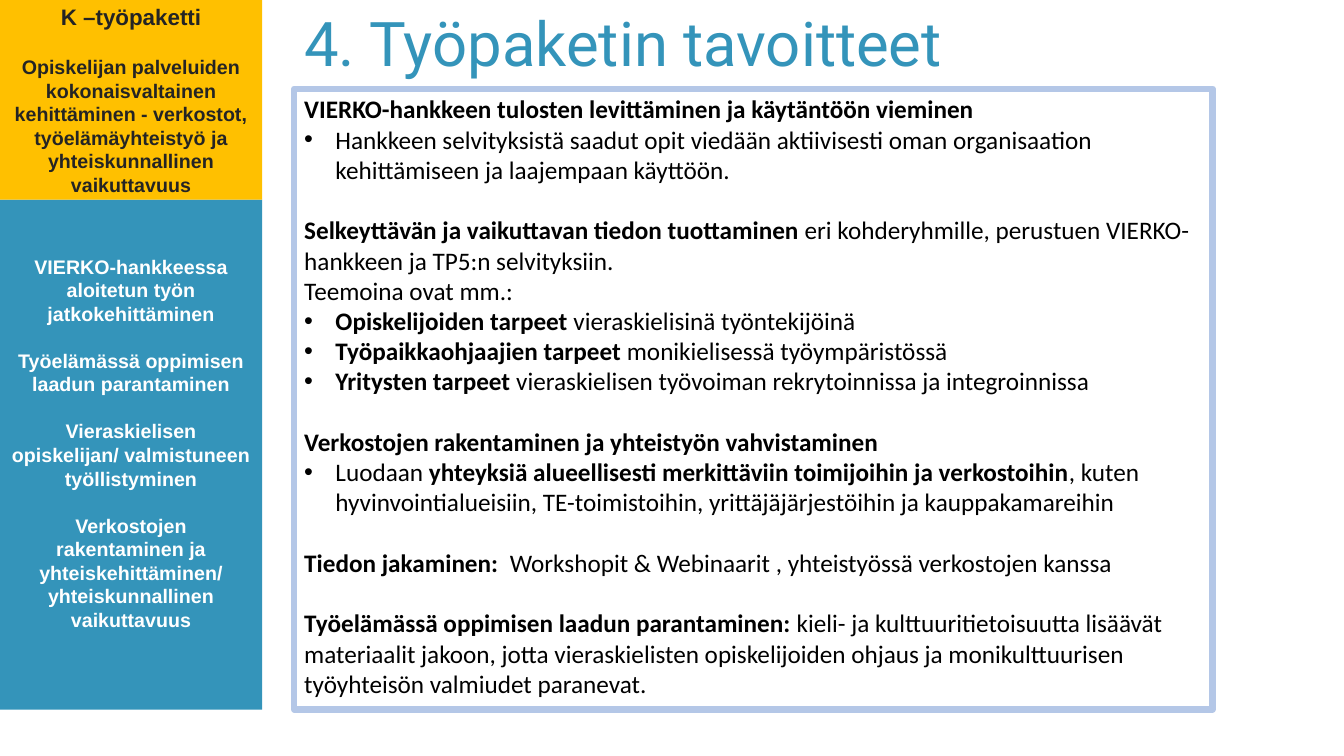
import pptx
import pptx.util
import pptx.dml.color
import pptx.enum.shapes
import pptx.enum.text
import lxml.etree
from pptx.oxml.ns import qn

COLORS = {"teal": "3494BA", "gold": "FFC000", "border": "B4C7E7",
          "white": "FFFFFF", "ink": "242424", "black": "000000"}
COLUMNS, ROWS = 133.33, 75
BULLET_INDENT = 0.31

THEMES = [
    "VIERKO-hankkeessa aloitetun työn jatkokehittäminen",
    "Työelämässä oppimisen laadun parantaminen",
    "Vieraskielisen opiskelijan/ valmistuneen työllistyminen",
    "Verkostojen rakentaminen ja yhteiskehittäminen/",
    "yhteiskunnallinen vaikuttavuus",
]
PACKAGE = [
    "K –työpaketti",
    "Opiskelijan palveluiden kokonaisvaltainen kehittäminen - verkostot, "
    "työelämäyhteistyö ja yhteiskunnallinen vaikuttavuus",
]
GOALS = [
    [("", "VIERKO-hankkeen tulosten levittäminen ja käytäntöön vieminen", ""),
     ("•", "", "Hankkeen selvityksistä saadut opit viedään aktiivisesti oman "
      "organisaation kehittämiseen ja laajempaan käyttöön.")],
    [("", "Selkeyttävän ja vaikuttavan tiedon tuottaminen ",
      "eri kohderyhmille, perustuen VIERKO-hankkeen ja TP5:n selvityksiin."),
     ("", "", "Teemoina ovat mm.:"),
     ("•", "Opiskelijoiden tarpeet ", "vieraskielisinä työntekijöinä"),
     ("•", "Työpaikkaohjaajien tarpeet ", "monikielisessä työympäristössä"),
     ("•", "Yritysten tarpeet ",
      "vieraskielisen työvoiman rekrytoinnissa ja integroinnissa")],
    [("", "Verkostojen rakentaminen ja yhteistyön vahvistaminen", ""),
     ("•", "", "Luodaan ",
      "yhteyksiä alueellisesti merkittäviin toimijoihin ja verkostoihin",
      ", kuten hyvinvointialueisiin, TE-toimistoihin, yrittäjäjärjestöihin "
      "ja kauppakamareihin")],
    [("", "Tiedon jakaminen:  ",
      "Workshopit & Webinaarit , yhteistyössä verkostojen kanssa")],
    [("", "Työelämässä oppimisen laadun parantaminen: ",
      "kieli- ja kulttuuritietoisuutta lisäävät materiaalit jakoon, jotta "
      "vieraskielisten opiskelijoiden ohjaus ja monikulttuurisen työyhteisön "
      "valmiudet paranevat.")],
]


def rgb(name):
    """Return the named colour."""
    return pptx.dml.color.RGBColor.from_string(COLORS[name])


def apply_format(target, values):
    """Set each attribute in the dict of format values."""
    for name, value in values.items():
        setattr(target, name, value)


def grid_box(deck, left, top, width, height):
    """Turn grid columns and rows into slide lengths."""
    column, row = deck.slide_width / COLUMNS, deck.slide_height / ROWS
    return [round(size) for size in
            (left * column, top * row, width * column, height * row)]


def add_panel(page, box, fill=None):
    """Add a flat rectangle, filled if a colour is named."""
    panel = page.shapes.add_shape(
        pptx.enum.shapes.MSO_SHAPE.RECTANGLE, *box)
    panel.shadow.inherit = False
    if fill:
        panel.fill.solid()
        panel.fill.fore_color.rgb = rgb(fill)
    else:
        panel.fill.background()
    panel.line.fill.background()
    panel.text_frame.word_wrap = True
    return panel


def add_para(frame, spans, size, font, color, first, gap=0, align="LEFT",
             bullet=""):
    """Add a paragraph of (text, bold) spans with an optional bullet."""
    para = frame.paragraphs[0] if first else frame.add_paragraph()
    if bullet:
        indent = pptx.util.Inches(BULLET_INDENT)
        props = para._p.get_or_add_pPr()
        props.set("marL", str(indent))
        props.set("indent", str(-indent))
        lxml.etree.SubElement(props, qn("a:buFont"), typeface="Arial")
        lxml.etree.SubElement(props, qn("a:buChar"), char=bullet)
    apply_format(para, {
        "alignment": getattr(pptx.enum.text.PP_ALIGN, align),
        "space_before": pptx.util.Pt(0 if first else gap)})
    for text, bold in spans:
        span = para.add_run()
        span.text = text
        apply_format(span.font, {
            "size": pptx.util.Pt(size), "name": font, "bold": bold})
        span.font.color.rgb = rgb(color)


def add_sidebar_panel(page, box, fill, color, texts, sizes, gaps, bottom):
    """Add a coloured panel with centred bold paragraphs."""
    panel = add_panel(page, box, fill)
    apply_format(panel.text_frame, {
        "vertical_anchor": pptx.enum.text.MSO_ANCHOR.MIDDLE,
        "margin_bottom": pptx.util.Inches(bottom)})
    for index, (text, size, gap) in enumerate(zip(texts, sizes, gaps)):
        add_para(panel.text_frame, [(text, True)], size, "Arial", color,
                 index == 0, gap, "CENTER")


def add_goals(page, box):
    """Add the bordered panel that lists the goals by group."""
    panel = add_panel(page, box)
    panel.line.color.rgb = rgb("border")
    panel.line.width = pptx.util.Pt(4.5)
    lxml.etree.SubElement(panel.line._get_or_add_ln(), qn("a:round"))
    frame = panel.text_frame
    frame.vertical_anchor = pptx.enum.text.MSO_ANCHOR.TOP
    for number, group in enumerate(GOALS):
        for index, (bullet, *texts) in enumerate(group):
            spans = [(text, place % 2 == 0)
                     for place, text in enumerate(texts) if text]
            add_para(frame, spans, 18, "Calibri", "black",
                     number == index == 0, 0 if index else 21.6,
                     bullet=bullet)


def add_title(page, box):
    """Add the slide title."""
    frame = page.shapes.add_textbox(*box).text_frame
    frame.word_wrap = True
    add_para(frame, [("4. Työpaketin tavoitteet", None)], 44, "Roboto",
             "teal", True)


def main():
    """Build and save the slide."""
    deck = pptx.Presentation()
    apply_format(deck, {"slide_width": pptx.util.Inches(13.33),
                        "slide_height": pptx.util.Inches(7.5)})
    page = deck.slides.add_slide(deck.slide_layouts[6])
    add_sidebar_panel(page, grid_box(deck, 0, 19.8, 26, 50.6), "teal",
                      "white", THEMES, [14] * 5, [0, 16.8, 16.8, 16.8, 0],
                      0.28)
    add_sidebar_panel(page, grid_box(deck, 0, 0, 26, 19.8), "gold", "ink",
                      PACKAGE, [16, 14], [0, 18], 0.05)
    add_goals(page, grid_box(deck, 29.2, 8.8, 91.1, 61.6))
    add_title(page, grid_box(deck, 29.2, 0, 89.6, 11.4))
    deck.save("out.pptx")


if __name__ == "__main__":
    main()
